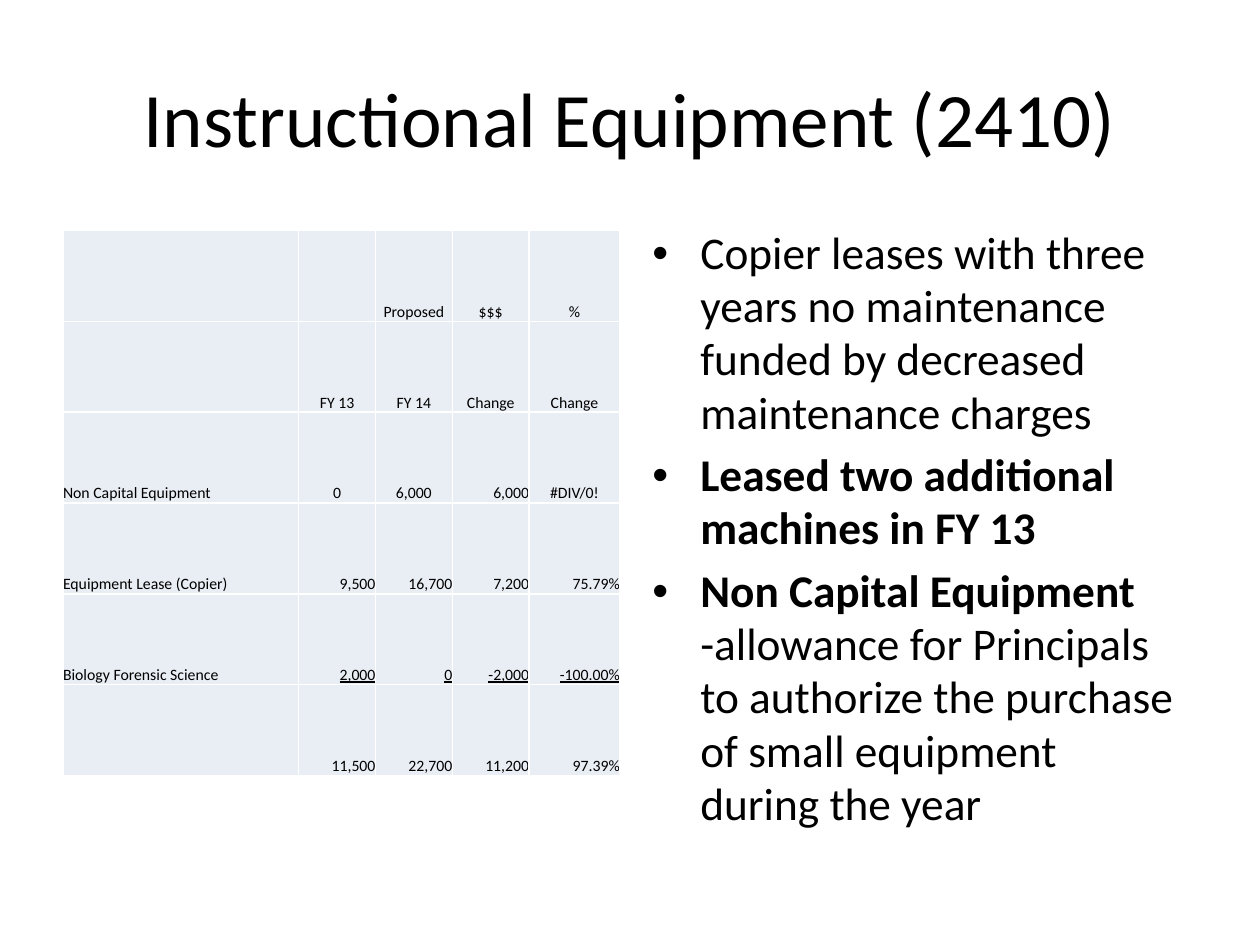
"""Build the Instructional Equipment budget slide."""
from dataclasses import dataclass

from lxml.etree import SubElement
from pptx import Presentation
from pptx.dml.color import RGBColor
from pptx.enum.text import MSO_ANCHOR, PP_ALIGN
from pptx.oxml.ns import qn
from pptx.util import Inches, Pt

WIDTH, HEIGHT = Inches(10), Inches(7.5)
FONT = "Calibri"
COLORS = {"text": "000000", "cell": "E9EDF4"}
ALIGNMENTS = {"l": PP_ALIGN.LEFT, "c": PP_ALIGN.CENTER, "r": PP_ALIGN.RIGHT}
COLUMN_WIDTHS = (1.87, 0.61, 0.61, 0.61, 0.72)


@dataclass(frozen=True)
class Area:
    """A rectangle given as shares of the slide."""
    left: float
    top: float
    width: float
    height: float

    def lengths(self) -> tuple[int, int, int, int]:
        return (int(self.left * WIDTH), int(self.top * HEIGHT),
                int(self.width * WIDTH), int(self.height * HEIGHT))


@dataclass(frozen=True)
class Span:
    """A run of text with its weight."""
    text: str
    bold: bool = False


@dataclass(frozen=True)
class Row:
    """A table row with one alignment letter per column."""
    values: tuple[str, ...]
    alignment: str
    underline: bool = False


TITLE_AREA = Area(0.05, 0.04, 0.9, 0.167)
BODY_AREA = Area(0.508, 0.233, 0.442, 0.66)
TABLE_AREA = Area(0.05, 0.244, 0.442, 0.577)

ROWS = (
    Row(("", "", "Proposed", "$$$", "%"), "lcccc"),
    Row(("", "FY 13", "FY 14", "Change", "Change"), "lcccc"),
    Row(("Non Capital Equipment", "0", "6,000", "6,000", "#DIV/0!"), "lccrc"),
    Row(("Equipment Lease (Copier)", "9,500", "16,700", "7,200", "75.79%"), "lrrrr"),
    Row(("Biology Forensic Science", "2,000", "0", "-2,000", "-100.00%"), "lrrrr", True),
    Row(("", "11,500", "22,700", "11,200", "97.39%"), "lrrrr"),
)

BULLETS = (
    (Span("Copier leases with three years no maintenance funded by "
          "decreased maintenance charges"),),
    (Span("Leased two additional machines in FY 13", True),),
    (Span("Non Capital Equipment ", True),
     Span("-allowance for Principals to authorize the purchase of small "
          "equipment during the year")),
)


def add_span(para, span: Span, size: float, underline: bool = False) -> None:
    """Append one styled run to a paragraph."""
    run = para.add_run()
    run.text = span.text
    font = run.font
    font.name, font.size, font.bold = FONT, Pt(size), span.bold
    font.underline = underline
    font.color.rgb = RGBColor.from_string(COLORS["text"])


def add_text_frame(page, area: Area, anchor: MSO_ANCHOR):
    """Add a wrapping text box and return its frame."""
    frame = page.shapes.add_textbox(*area.lengths()).text_frame
    frame.word_wrap = True
    frame.vertical_anchor = anchor
    return frame


def add_title(page, text: str) -> None:
    """Add the centred heading."""
    para = add_text_frame(page, TITLE_AREA, MSO_ANCHOR.MIDDLE).paragraphs[0]
    para.alignment = PP_ALIGN.CENTER
    add_span(para, Span(text), 44)


def add_bullets(page, bullets: tuple[tuple[Span, ...], ...]) -> None:
    """Add the bulleted notes."""
    frame = add_text_frame(page, BODY_AREA, MSO_ANCHOR.TOP)
    for index, spans in enumerate(bullets):
        para = frame.add_paragraph() if index else frame.paragraphs[0]
        para.space_before = Pt(5.2)
        para.line_spacing = 0.98
        properties = para._p.get_or_add_pPr()
        properties.set("marL", str(Inches(0.38)))
        properties.set("indent", str(-Inches(0.38)))
        SubElement(properties, qn("a:buFont")).set("typeface", "Arial")
        SubElement(properties, qn("a:buChar")).set("char", "•")
        for span in spans:
            add_span(para, span, 25.9)


def fill_cell(cell, text: str, alignment: str, underline: bool) -> None:
    """Style a cell and write its value."""
    cell.fill.solid()
    cell.fill.fore_color.rgb = RGBColor.from_string(COLORS["cell"])
    cell.margin_left = cell.margin_right = cell.margin_top = cell.margin_bottom = 0
    cell.vertical_anchor = MSO_ANCHOR.BOTTOM
    para = cell.text_frame.paragraphs[0]
    para.alignment = ALIGNMENTS[alignment]
    if text:
        add_span(para, Span(text), 9, underline)


def add_budget_table(page, rows: tuple[Row, ...]) -> None:
    """Add the budget comparison table."""
    table = page.shapes.add_table(
        len(rows), len(COLUMN_WIDTHS), *TABLE_AREA.lengths()).table
    table.first_row = table.horz_banding = False
    for column, width in zip(table.columns, COLUMN_WIDTHS):
        column.width = Inches(width)
    for table_row, row in zip(table.rows, rows):
        for cell, text, alignment in zip(table_row.cells, row.values, row.alignment):
            fill_cell(cell, text, alignment, row.underline and alignment == "r")


def main() -> None:
    """Assemble and save the deck."""
    deck = Presentation()
    deck.slide_width, deck.slide_height = WIDTH, HEIGHT
    page = deck.slides.add_slide(deck.slide_layouts[6])
    add_title(page, "Instructional Equipment (2410)")
    add_bullets(page, BULLETS)
    add_budget_table(page, ROWS)
    deck.save("out.pptx")


if __name__ == "__main__":
    main()
